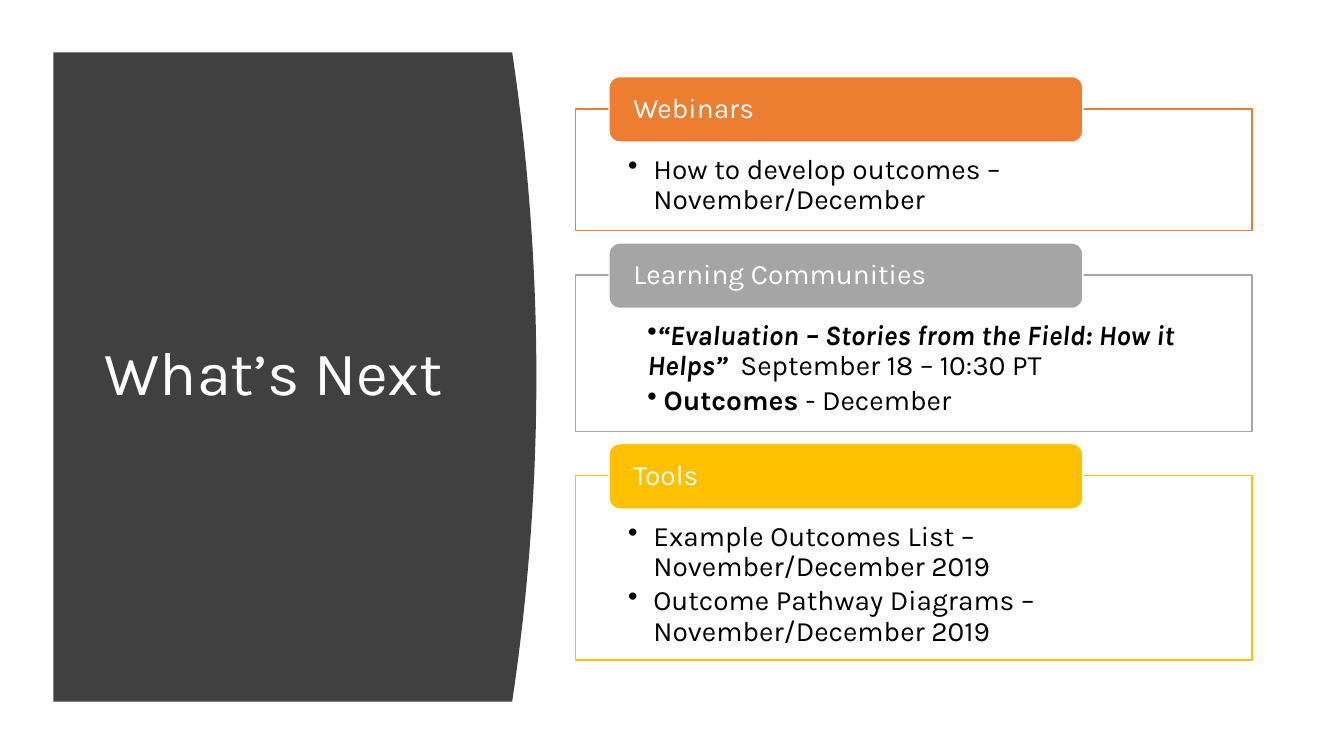
from dataclasses import dataclass

from lxml import etree
from pptx import Presentation
from pptx.dml.color import RGBColor
from pptx.enum.shapes import MSO_SHAPE
from pptx.enum.text import MSO_ANCHOR, MSO_AUTO_SIZE, PP_ALIGN
from pptx.oxml.ns import qn
from pptx.util import Inches, Pt

RECTANGLE = MSO_SHAPE.RECTANGLE
ROUNDED = MSO_SHAPE.ROUNDED_RECTANGLE
TOP, MIDDLE = MSO_ANCHOR.TOP, MSO_ANCHOR.MIDDLE
LEFT = PP_ALIGN.LEFT
NO_AUTOFIT = MSO_AUTO_SIZE.NONE


@dataclass(frozen=True)
class Theme:
    font: str = "Karla"
    title_size: int = 44
    body_size: int = 20
    panel: str = "404040"
    light: str = "FFFFFF"
    dark: str = "000000"
    orange: str = "ED7D31"
    grey: str = "A5A5A5"
    yellow: str = "FFC000"


THEME = Theme()
BOLD = {"bold": True}
BOLD_ITALIC = {"bold": True, "italic": True}
HANGING = (0.25, -0.25)
FLUSH = (0.19, 0)

# Heading, colour, box top, box height, bullet indent, paragraphs of (text, format) runs
SECTIONS = [
    ("Webinars", THEME.orange, 1.08, 1.21, HANGING, [
        [("How to develop outcomes – November/December", {})],
    ]),
    ("Learning Communities", THEME.grey, 2.73, 1.55, FLUSH, [
        [("“Evaluation – Stories from the Field: How it Helps”  ", BOLD_ITALIC),
         ("September 18 – 10:30 PT", {})],
        [(" ", BOLD_ITALIC), ("Outcomes ", BOLD), ("- December", {})],
    ]),
    ("Tools", THEME.yellow, 4.72, 1.83, HANGING, [
        [("Example Outcomes List – November/December 2019", {})],
        [("Outcome Pathway Diagrams – November/December 2019", {})],
    ]),
]


class SlideBuilder:
    def __init__(self, slide, theme):
        self.slide = slide
        self.theme = theme

    def paint(self, shape, fill, line=None):
        shape.shadow.inherit = False
        shape.fill.solid()
        shape.fill.fore_color.rgb = RGBColor.from_string(fill)
        if line:
            shape.line.color.rgb = RGBColor.from_string(line)
            shape.line.width = Pt(1)
        else:
            shape.line.fill.background()

    def set_text(self, shape, paragraphs, size, color, anchor, insets, space_after=0, indent=None):
        """Fill a shape with paragraphs of runs; an indent turns them into bullets."""
        frame = shape.text_frame
        left, top, right, bottom = map(Inches, insets)
        settings = {"word_wrap": True, "auto_size": NO_AUTOFIT, "vertical_anchor": anchor,
                    "margin_left": left, "margin_top": top,
                    "margin_right": right, "margin_bottom": bottom}
        for name, value in settings.items():
            setattr(frame, name, value)
        for index, runs in enumerate(paragraphs):
            paragraph = frame.add_paragraph() if index else frame.paragraphs[0]
            paragraph.alignment = LEFT
            paragraph.line_spacing = 0.9
            paragraph.space_before = Pt(0)
            paragraph.space_after = Pt(space_after)
            if indent:
                self.add_bullet(paragraph, *indent)
            for text, emphasis in runs:
                run = paragraph.add_run()
                run.text = text
                font_format = {"name": self.theme.font, "size": Pt(size),
                               "bold": False, "italic": False, **emphasis}
                for name, value in font_format.items():
                    setattr(run.font, name, value)
                run.font.color.rgb = RGBColor.from_string(color)

    def add_bullet(self, paragraph, margin, first_line):
        properties = paragraph._p.get_or_add_pPr()
        properties.set("marL", str(Inches(margin)))
        properties.set("indent", str(Inches(first_line)))
        etree.SubElement(properties, qn("a:buChar")).set("char", "•")

    def add_curved_panel(self, left, top, edge, height, bulge, steps=40):
        """Draw a panel whose right edge bows outward as a parabola."""
        curve = []
        for step in range(steps + 1):
            offset = 2 * step / steps - 1
            curve.append((Inches(edge + bulge * (1 - offset ** 2)),
                          Inches(top + height * step / steps)))
        builder = self.slide.shapes.build_freeform(Inches(left), Inches(top), scale=1.0)
        builder.add_line_segments(curve + [(Inches(left), Inches(top + height))], close=True)
        self.paint(builder.convert_to_shape(), self.theme.panel)

    def add_title(self, text, left, top, width, height):
        title = self.slide.shapes.title
        title.left, title.top = Inches(left), Inches(top)
        title.width, title.height = Inches(width), Inches(height)
        self.set_text(title, [[(text, {})]], self.theme.title_size, self.theme.light,
                      MIDDLE, (0.1, 0.05, 0.1, 0.05))
        # Bring the title in front of the panel
        title._element.getparent().append(title._element)

    def add_box(self, kind, left, top, width, height, fill, line):
        shape = self.slide.shapes.add_shape(
            kind, Inches(left), Inches(top), Inches(width), Inches(height))
        self.paint(shape, fill, line)
        return shape

    def add_section(self, heading, color, top, height, indent, paragraphs):
        """Draw an outlined box of bullets with a heading tab across its top edge."""
        theme = self.theme
        box = self.add_box(RECTANGLE, 5.71, top, 6.71, height, theme.light, color)
        fill_color = box._element.spPr.find(qn("a:solidFill"))[0]
        etree.SubElement(fill_color, qn("a:alpha")).set("val", "90000")
        self.set_text(box, paragraphs, theme.body_size, theme.dark, TOP,
                      (0.52, 0.46, 0.52, 0.16), space_after=3, indent=indent)
        tab = self.add_box(ROUNDED, 6.04, top - 0.32, 4.7, 0.65, color, theme.light)
        self.set_text(tab, [[(heading, {})]], theme.body_size, theme.light, MIDDLE,
                      (0.21, 0, 0.21, 0))


def main():
    presentation = Presentation()
    presentation.slide_width = Inches(13.33)
    presentation.slide_height = Inches(7.5)
    slide = presentation.slides.add_slide(presentation.slide_layouts[5])
    builder = SlideBuilder(slide, THEME)
    builder.add_curved_panel(0.53, 0.52, 5.08, 6.44, 0.24)
    builder.add_title("What’s Next", 0.94, 1.11, 3.74, 5.24)
    for section in SECTIONS:
        builder.add_section(*section)
    presentation.save("out.pptx")


if __name__ == "__main__":
    main()
